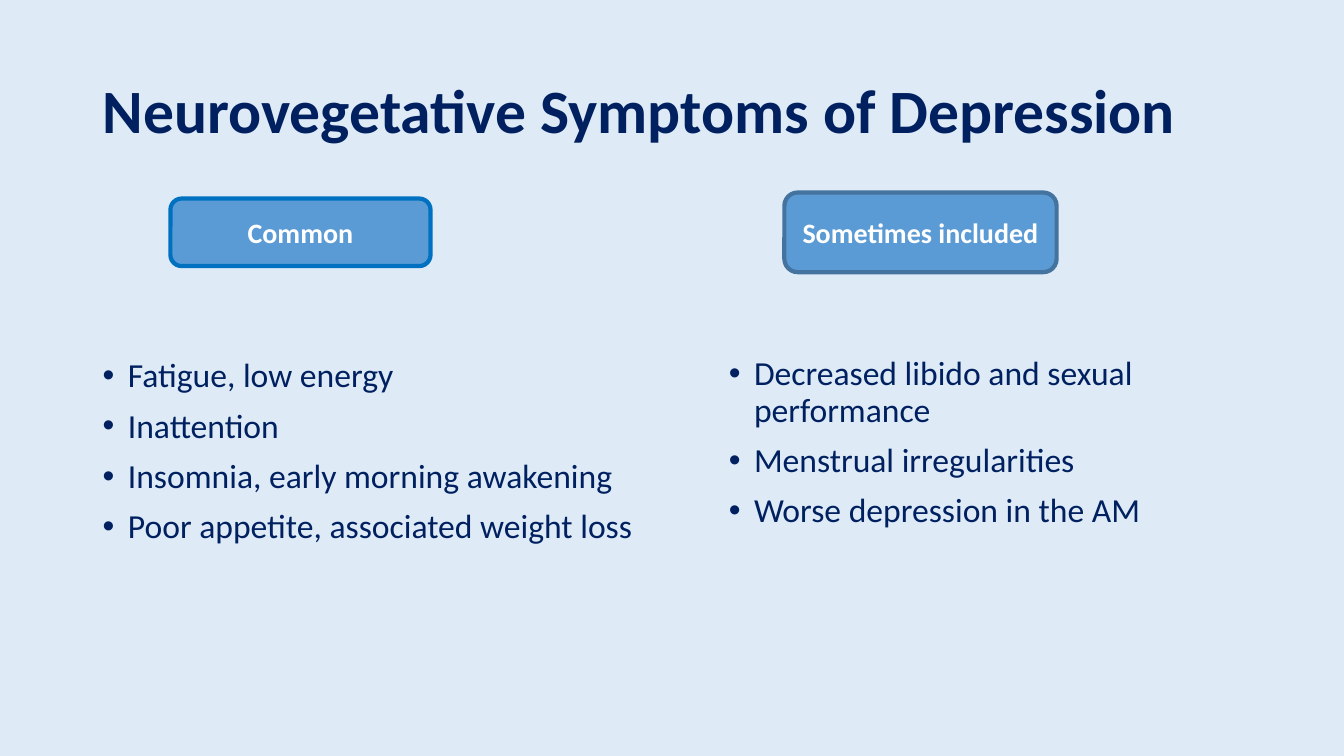
from pptx import Presentation
from pptx.dml.color import RGBColor
from pptx.enum import shapes, text
from pptx.oxml import parse_xml
from pptx.oxml.ns import nsdecls
from pptx.util import Inches, Pt

HEADING = "Neurovegetative Symptoms of Depression"
BACKGROUND = RGBColor(0xDE, 0xEB, 0xF7)
NAVY = RGBColor(0x00, 0x20, 0x60)
BLUE = RGBColor(0x5B, 0x9B, 0xD5)
BRIGHT_EDGE = RGBColor(0x00, 0x70, 0xC0)
DULL_EDGE = RGBColor(0x43, 0x73, 0x9E)
WHITE = RGBColor(0xFF, 0xFF, 0xFF)

GROUPS = [
    {
        "label": "Common",
        "label_area": (1.69, 1.97, 2.58, 0.67),
        "edge": BRIGHT_EDGE,
        "symptoms": [
            "Fatigue, low energy",
            "Inattention",
            "Insomnia, early morning awakening",
            "Poor appetite, associated weight loss",
        ],
        "symptoms_area": (0.92, 3.51, 5.59, 3.25),
    },
    {
        "label": "Sometimes included",
        "label_area": (7.78, 1.91, 2.7, 0.79),
        "edge": DULL_EDGE,
        "symptoms": [
            "Decreased libido and sexual performance",
            "Menstrual irregularities",
            "Worse depression in the AM",
        ],
        "symptoms_area": (7.13, 3.49, 5.59, 3.75),
    },
]


def add_words(paragraph, words, size, color, bold=False):
    run = paragraph.add_run()
    run.text = words
    run.font.name = "Calibri"
    run.font.size = Pt(size)
    run.font.bold = bold
    run.font.color.rgb = color


def add_frame(slide, area):
    frame = slide.shapes.add_textbox(*map(Inches, area)).text_frame
    frame.word_wrap = True
    return frame


def add_label(slide, group):
    label = slide.shapes.add_shape(
        shapes.MSO_SHAPE.ROUNDED_RECTANGLE, *map(Inches, group["label_area"])
    )
    label.shadow.inherit = False
    label.fill.solid()
    label.fill.fore_color.rgb = BLUE
    label.line.color.rgb = group["edge"]
    label.line.width = Pt(3)
    label.text_frame.vertical_anchor = text.MSO_ANCHOR.MIDDLE
    caption = label.text_frame.paragraphs[0]
    caption.alignment = text.PP_ALIGN.CENTER
    add_words(caption, group["label"], 20, WHITE, bold=True)


def add_symptoms(slide, group):
    frame = add_frame(slide, group["symptoms_area"])
    for index, symptom in enumerate(group["symptoms"]):
        item = frame.add_paragraph() if index else frame.paragraphs[0]
        item.line_spacing = 0.9
        item.space_before = Pt(10)
        props = item._p.get_or_add_pPr()
        props.set("marL", str(Inches(0.25)))
        props.set("indent", str(-Inches(0.25)))
        props.append(parse_xml(f'<a:buFont {nsdecls("a")} typeface="Arial"/>'))
        props.append(parse_xml(f'<a:buChar {nsdecls("a")} char="•"/>'))
        add_words(item, symptom, 24, NAVY)


def main():
    deck = Presentation()
    deck.slide_width, deck.slide_height = Inches(13.33), Inches(7.5)
    slide = deck.slides.add_slide(deck.slide_layouts[6])
    slide.background.fill.solid()
    slide.background.fill.fore_color.rgb = BACKGROUND

    heading = add_frame(slide, (0.92, 0.4, 11.5, 1.45))
    heading.vertical_anchor = text.MSO_ANCHOR.MIDDLE
    heading.paragraphs[0].line_spacing = 0.9
    add_words(heading.paragraphs[0], HEADING, 44, NAVY, bold=True)

    for group in GROUPS:
        add_label(slide, group)
        add_symptoms(slide, group)
    deck.save("out.pptx")


if __name__ == "__main__":
    main()
